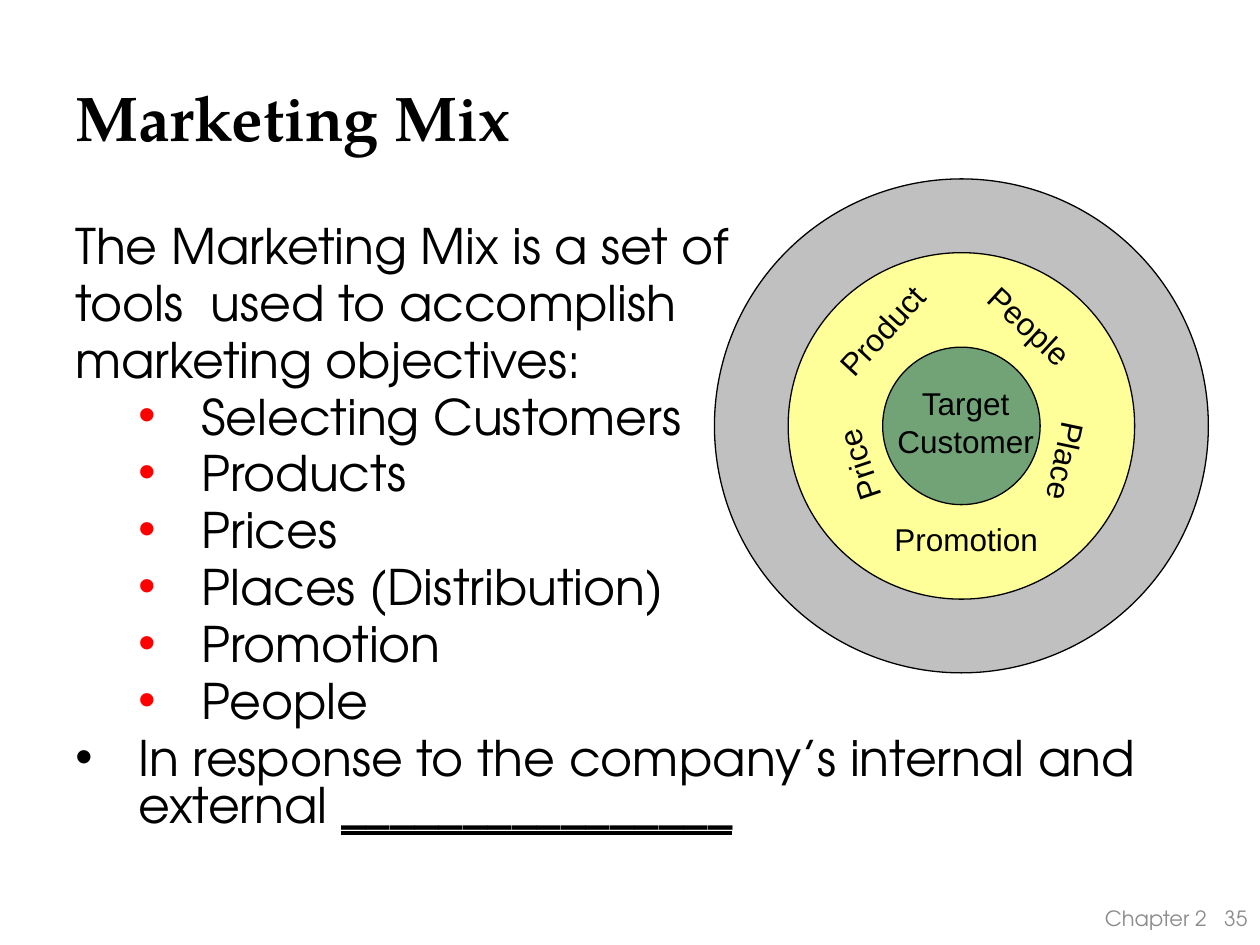
from lxml.etree import SubElement
from pptx import Presentation
from pptx.dml.color import RGBColor as RGB
from pptx.enum.shapes import MSO_SHAPE as Kind
from pptx.enum.text import MSO_ANCHOR as Anchor, PP_ALIGN as Align
from pptx.oxml.ns import qn
from pptx.util import Inches, Pt

INK, GREY, RED = "000000", "8C8C8C", "FF0000"
HEAD = dict(name="TeX Gyre Pagella", size=Pt(36), bold=True)
BODY = dict(name="TeX Gyre Adventor", size=Pt(28))
FOOT = dict(name="TeX Gyre Adventor", size=Pt(12))
LABEL = dict(name="Arial", size=Pt(18))

INTRO = ["The Marketing Mix is a set of", "tools  used to accomplish",
         "marketing objectives:"]
TOOLS = ["Selecting Customers", "Products", "Prices",
         "Places (Distribution)", "Promotion", "People"]
CLOSE = "In response to the company’s internal and external "
BLANK = "_" * 16

# Rings share one centre: diameter, fill
CENTRE = (7.63, 3.38)
RINGS = [(3.92, "C0C0C0"), (2.75, "FFFF99"), (1.25, "72A376")]

# Text, box, turn in degrees, alignment
LABELS = [
    ("Target Customer", (7, 3, 1.33, 0.7), 0, Align.CENTER),
    ("Product", (6.45, 2.38, 1.17, 0.4), 312.6, Align.LEFT),
    ("Price", (6.33, 3.42, 0.92, 0.4), 251.4, Align.LEFT),
    ("Place", (7.99, 3.51, 0.92, 0.4), 102.1, Align.LEFT),
    ("Promotion", (7, 4.08, 1.42, 0.4), 0, Align.LEFT),
    ("People", (7.67, 2.42, 1.08, 0.4), 42.8, Align.LEFT),
]


def color(code):
    return RGB.from_string(code)


def style(font, look, code=INK):
    for key, val in look.items():
        setattr(font, key, val)
    font.color.rgb = color(code)


def add_box(slide, box, anchor=Anchor.TOP):
    shape = slide.shapes.add_textbox(*map(Inches, box))
    shape.text_frame.word_wrap = True
    shape.text_frame.vertical_anchor = anchor
    return shape


def add_run(para, text, look, code=INK):
    run = para.add_run()
    run.text = text
    style(run.font, look, code)


def add_line(slide, text, box, look, code=INK, align=Align.LEFT,
             anchor=Anchor.TOP):
    shape = add_box(slide, box, anchor)
    para = shape.text_frame.paragraphs[0]
    para.alignment = align
    add_run(para, text, look, code)
    return shape


def set_bullet(para, left, code):
    props = para._p.get_or_add_pPr()
    props.set("marL", str(Inches(left)))
    props.set("indent", str(Inches(-0.5)))
    tint = SubElement(props, qn("a:buClr"))
    SubElement(tint, qn("a:srgbClr"), val=code)
    SubElement(props, qn("a:buFont"), typeface="Arial")
    SubElement(props, qn("a:buChar"), char="•")


def add_body(slide):
    frame = add_box(slide, (0.5, 1.75, 9, 5.42)).text_frame
    rows = [(text, None, INK) for text in INTRO]
    rows += [(text, 1, RED) for text in TOOLS]
    rows.append((CLOSE, 0.5, INK))
    for i, (text, left, code) in enumerate(rows):
        para = frame.add_paragraph() if i else frame.paragraphs[0]
        para.line_spacing = 0.8
        para.space_before = Pt(5.6 if i else 0)
        if left:
            set_bullet(para, left, code)
        add_run(para, text, BODY)
    add_run(para, BLANK, dict(BODY, bold=True, underline=True))


def add_ring(slide, size, code):
    left, top = (mid - size / 2 for mid in CENTRE)
    ring = slide.shapes.add_shape(
        Kind.OVAL, *map(Inches, (left, top, size, size)))
    ring.shadow.inherit = False
    ring.fill.solid()
    ring.fill.fore_color.rgb = color(code)
    ring.line.color.rgb = color(INK)
    ring.line.width = Pt(0.75)


def main():
    deck = Presentation()
    deck.slide_width, deck.slide_height = Inches(10), Inches(7.5)
    slide = deck.slides.add_slide(deck.slide_layouts[6])
    add_line(slide, "Chapter 2\u00a0\u00a0 35".replace("\u00a0", " "),
             (7.58, 7.08, 2.42, 0.42), FOOT, GREY, Align.RIGHT, Anchor.MIDDLE)
    add_line(slide, "Marketing Mix", (0.5, 0.3, 9, 1.25), HEAD,
             anchor=Anchor.MIDDLE)
    add_body(slide)
    for size, code in RINGS:
        add_ring(slide, size, code)
    for text, box, turn, align in LABELS:
        add_line(slide, text, box, LABEL, align=align).rotation = turn
    deck.save("out.pptx")


if __name__ == "__main__":
    main()
